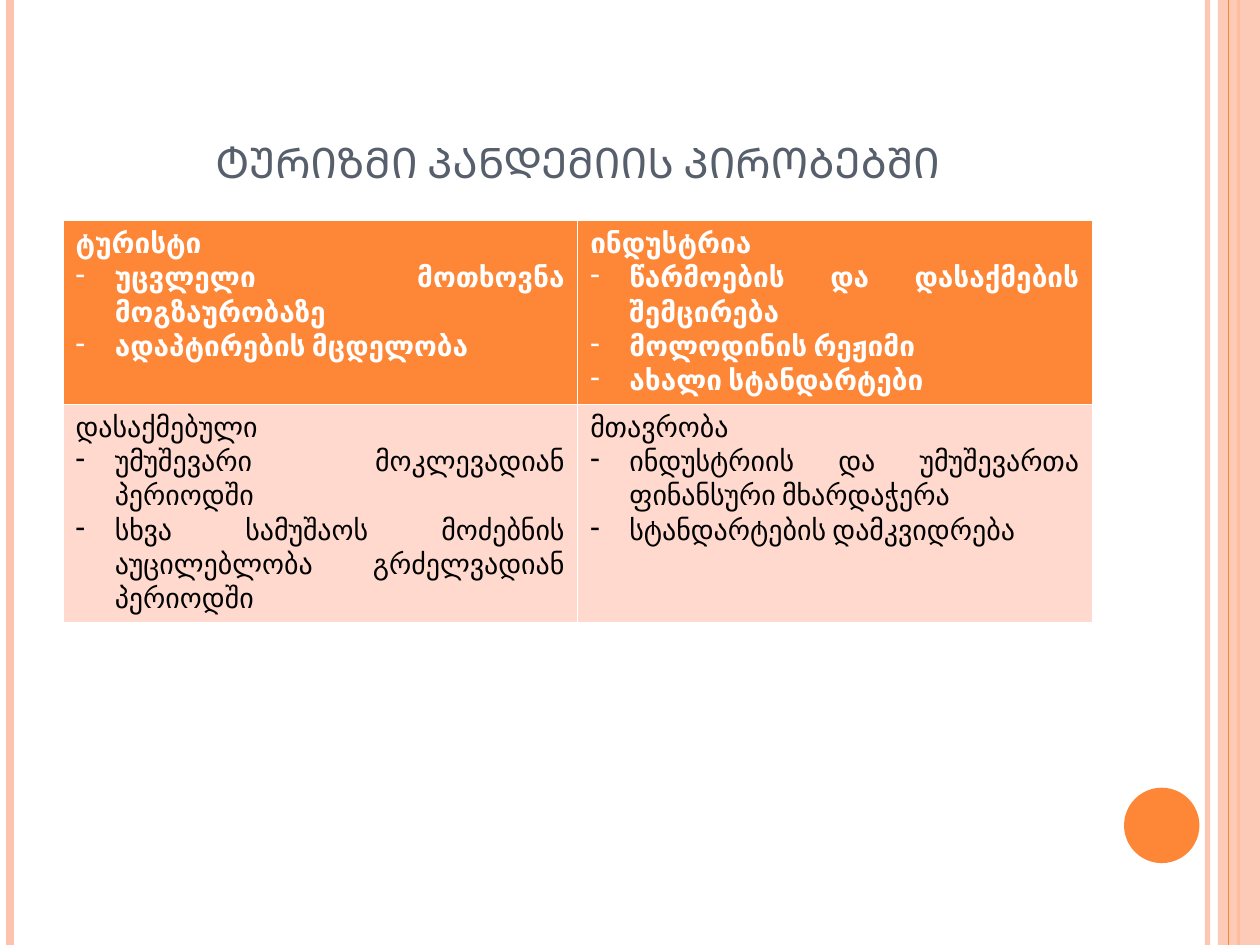
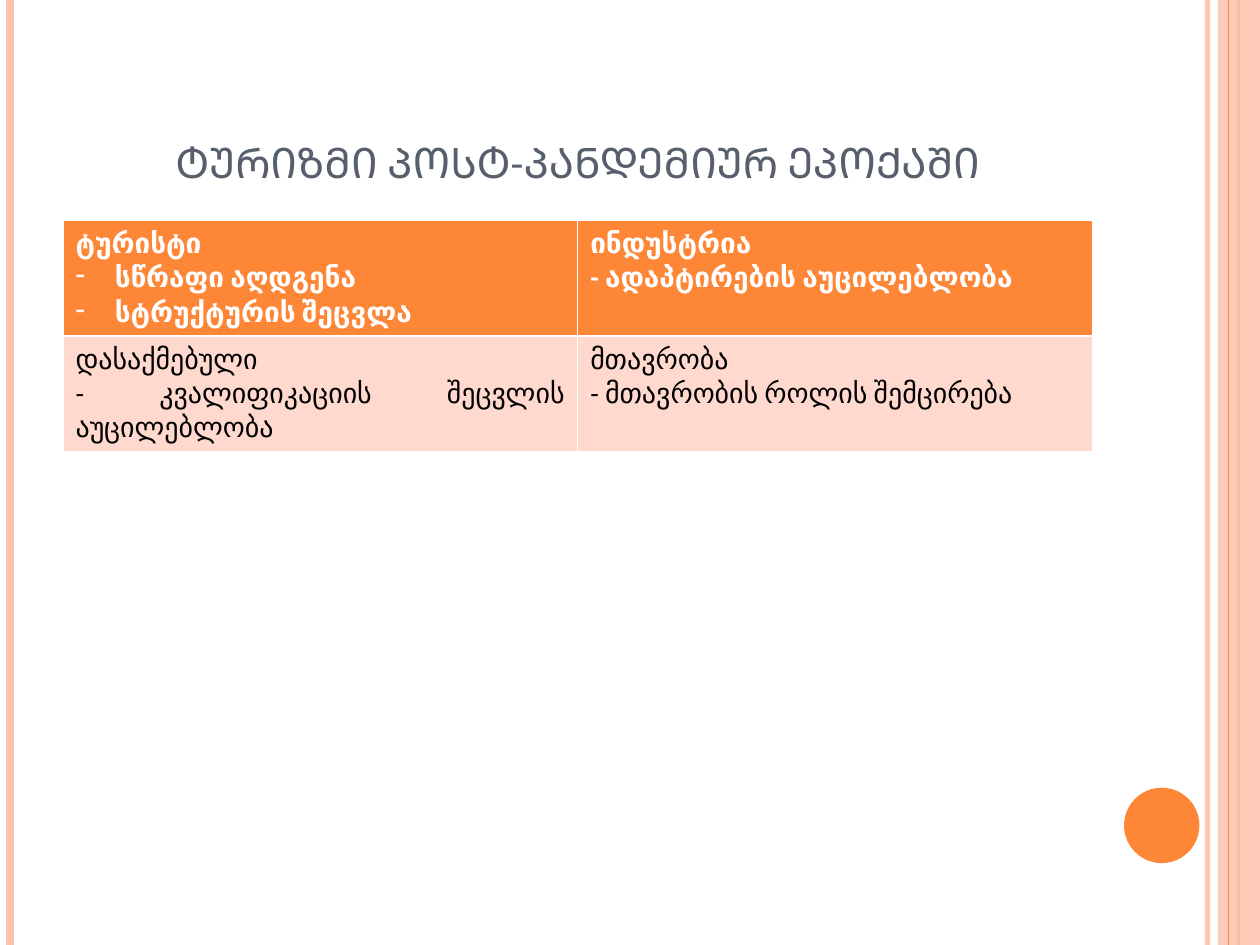
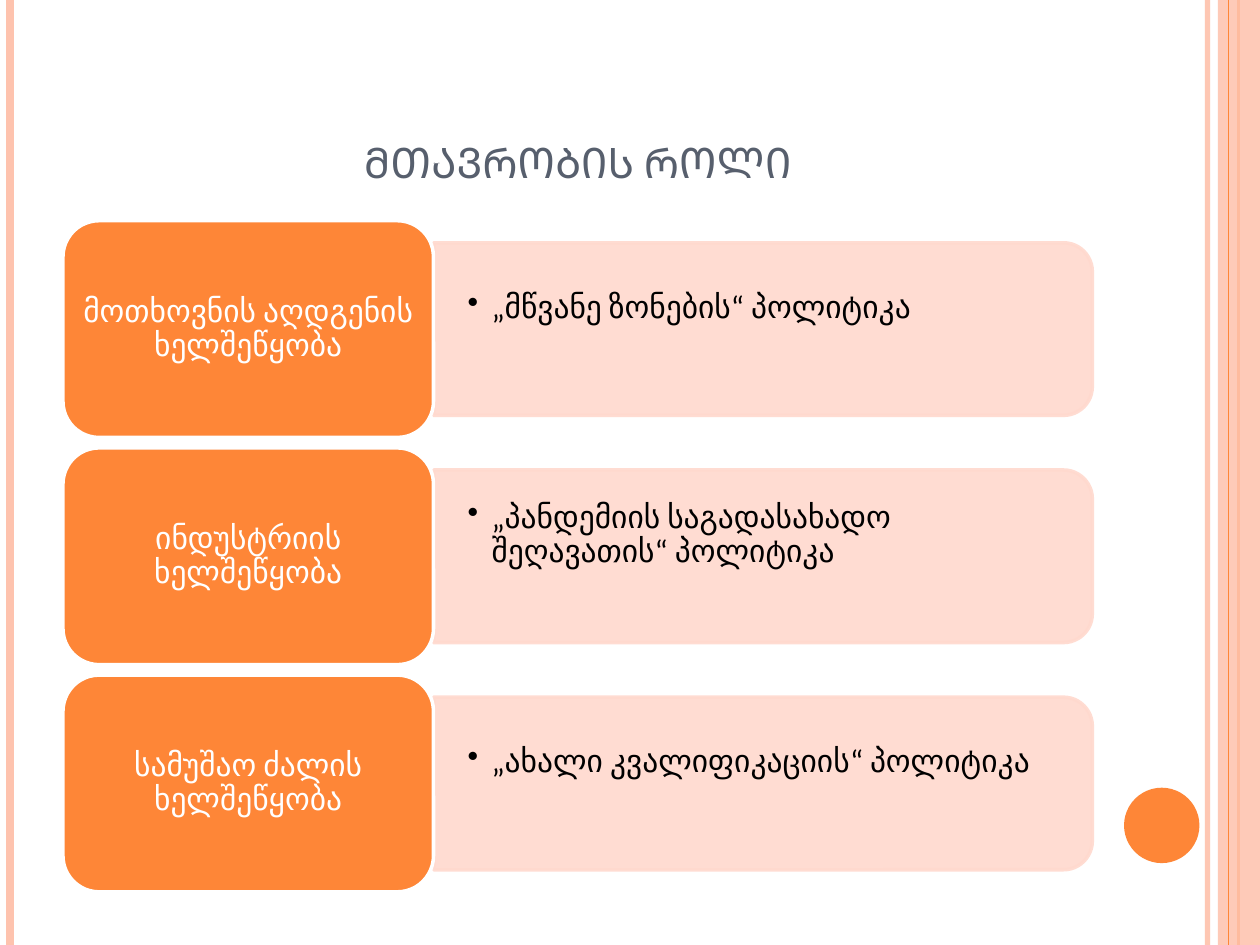
from lxml.etree import SubElement
from pptx import Presentation
from pptx.dml.color import RGBColor
from pptx.enum.shapes import MSO_CONNECTOR, MSO_SHAPE
from pptx.enum.text import MSO_ANCHOR, PP_ALIGN
from pptx.oxml.ns import qn
from pptx.util import Cm, Pt

# Shared look
FONT = "Calibri"
ORANGE, PEACH, PALE = "FE8637", "FEC3AE", "FFD9CE"
SLATE, WHITE, BLACK = "575F6D", "FFFFFF", "000000"
SLIDE_WIDTH, SLIDE_HEIGHT = 25.4, 19.05
LEFT, CONTENT_TOP, CONTENT_WIDTH = 1.27, 4.45, 20.75

# Content: each table cell is a heading and its points
PANDEMIC_TABLE = [
    [("ტურისტი", ["უცვლელი მოთხოვნა მოგზაურობაზე", "ადაპტირების მცდელობა"]),
     ("ინდუსტრია", ["წარმოების და დასაქმების შემცირება", "მოლოდინის რეჟიმი",
                    "ახალი სტანდარტები"])],
    [("დასაქმებული", ["უმუშევარი მოკლევადიან პერიოდში",
                      "სხვა სამუშაოს მოძებნის აუცილებლობა გრძელვადიან პერიოდში"]),
     ("მთავრობა", ["ინდუსტრიის და უმუშევართა ფინანსური მხარდაჭერა",
                   "სტანდარტების დამკვიდრება"])],
]
POST_PANDEMIC_TABLE = [
    [("ტურისტი", ["სწრაფი აღდგენა", "სტრუქტურის შეცვლა"]),
     ("ინდუსტრია", ["- ადაპტირების აუცილებლობა"])],
    [("დასაქმებული", ["- კვალიფიკაციის შეცვლის აუცილებლობა"]),
     ("მთავრობა", ["- მთავრობის როლის შემცირება"])],
]
GOVERNMENT_POLICIES = [
    ("მოთხოვნის აღდგენის ხელშეწყობა", "„მწვანე ზონების“ პოლიტიკა"),
    ("ინდუსტრიის ხელშეწყობა", "„პანდემიის საგადასახადო შეღავათის“ პოლიტიკა"),
    ("სამუშაო ძალის ხელშეწყობა", "„ახალი კვალიფიკაციის“ პოლიტიკა"),
]


def color(value):
    return RGBColor.from_string(value)


def set_opacity(shape, percent):
    for tint in shape.element.iter(qn("a:srgbClr")):
        SubElement(tint, qn("a:alpha")).set("val", str(percent * 1000))


# Text
def add_run(para, text, size, tint, bold=False):
    span = para.add_run()
    span.text = text
    span.font.name = FONT
    span.font.size = Pt(size)
    span.font.bold = bold
    span.font.color.rgb = color(tint)
    return span


def set_bullet(para, mark, indent):
    properties = para._p.get_or_add_pPr()
    properties.set("marL", str(Cm(indent)))
    properties.set("indent", str(-Cm(indent)))
    SubElement(properties, qn("a:buChar")).set("char", mark)


def set_frame(frame, left, top, right, bottom):
    frame.word_wrap = True
    frame.vertical_anchor = MSO_ANCHOR.MIDDLE
    frame.margin_left, frame.margin_top = Cm(left), Cm(top)
    frame.margin_right, frame.margin_bottom = Cm(right), Cm(bottom)


# Shapes
def add_block(page, kind, left, top, width, height, fill, line=None):
    shape = page.shapes.add_shape(kind, Cm(left), Cm(top), Cm(width), Cm(height))
    shape.shadow.inherit = False
    shape.fill.solid()
    shape.fill.fore_color.rgb = color(fill)
    if line:
        shape.line.color.rgb = color(line)
        shape.line.width = Pt(2)
    else:
        shape.line.fill.background()
    return shape


def add_stripe(page, x, tint, width):
    stripe = page.shapes.add_connector(
        MSO_CONNECTOR.STRAIGHT, Cm(x), 0, Cm(x), Cm(SLIDE_HEIGHT))
    stripe.line.color.rgb = color(tint)
    stripe.line.width = Pt(width)
    SubElement(stripe.element.find(qn("p:spPr")), qn("a:effectLst"))
    return stripe


def decorate_layout(page):
    """Draw the side bands and the disc, then move them to the layout."""
    edge = add_stripe(page, 24.34, PEACH, 3)
    set_opacity(edge, 93)
    parts = [edge, add_stripe(page, 0.21, PEACH, 4.5), add_stripe(page, 24.97, ORANGE, 1.5)]
    band = add_block(page, MSO_SHAPE.RECTANGLE, 24.55, 0, 0.85, SLIDE_HEIGHT, PEACH)
    set_opacity(band, 87)
    parts += [band, add_stripe(page, 24.77, ORANGE, 0.75),
              add_block(page, MSO_SHAPE.OVAL, 22.66, 15.88, 1.52, 1.52, ORANGE)]
    for number, part in enumerate(parts, start=101):
        next(part.element.iter(qn("p:cNvPr"))).set("id", str(number))
        page.slide_layout.shapes.element.append(part.element)


# Slide parts
def add_page(deck, title):
    page = deck.slides.add_slide(deck.slide_layouts[5])
    box = page.shapes.title
    box.left, box.top, box.width, box.height = Cm(LEFT), Cm(0.76), Cm(CONTENT_WIDTH), Cm(3.18)
    box.text_frame.vertical_anchor = MSO_ANCHOR.BOTTOM
    para = box.text_frame.paragraphs[0]
    para.alignment = PP_ALIGN.CENTER
    span = add_run(para, title, 30, SLATE)
    span.font._element.set("cap", "small")
    return page


def fill_cell(cell, heading, points, is_header):
    cell.fill.solid()
    cell.fill.fore_color.rgb = color(ORANGE if is_header else PALE)
    tint = WHITE if is_header else BLACK
    frame = cell.text_frame
    add_run(frame.paragraphs[0], heading, 16, tint, is_header)
    for point in points:
        para = frame.add_paragraph()
        para.alignment = PP_ALIGN.JUSTIFY
        if not point.startswith("-"):
            set_bullet(para, "-", 0.79)
        add_run(para, point, 16, tint, is_header)


def add_group_table(page, rows, heights):
    table = page.shapes.add_table(
        len(rows), len(rows[0]), Cm(LEFT), Cm(CONTENT_TOP),
        Cm(CONTENT_WIDTH), Cm(sum(heights))).table
    for row_index, (row, height) in enumerate(zip(rows, heights)):
        table.rows[row_index].height = Cm(height)
        for column_index, (heading, points) in enumerate(row):
            fill_cell(table.cell(row_index, column_index), heading, points, row_index == 0)


def add_policy(page, top, goal, policy):
    card_width, card_height = 7.47, 4.37
    bar_left, bar_width, bar_height = LEFT + card_width, 13.28, 3.48
    middle = top + card_height / 2

    # Pale bar: an upright shape turned so its round end faces right
    bar = add_block(page, MSO_SHAPE.ROUND_2_SAME_RECTANGLE,
                    bar_left + (bar_width - bar_height) / 2, middle - bar_width / 2,
                    bar_height, bar_width, PALE, PALE)
    bar.rotation = 90
    set_opacity(bar, 90)

    # Policy text over the bar
    box = page.shapes.add_textbox(Cm(bar_left), Cm(middle - 1.57), Cm(13.1), Cm(3.15))
    set_frame(box.text_frame, 0.69, 0.36, 0.69, 1.22)
    para = box.text_frame.paragraphs[0]
    para.line_spacing = 0.9
    set_bullet(para, "•", 0.48)
    add_run(para, policy, 18, BLACK)

    # Goal card
    card = add_block(page, MSO_SHAPE.ROUNDED_RECTANGLE, LEFT, top,
                     card_width, card_height, ORANGE, WHITE)
    set_frame(card.text_frame, 0.16, 0.1, 0.16, 0.1)
    para = card.text_frame.paragraphs[0]
    para.alignment = PP_ALIGN.CENTER
    para.line_spacing = 0.9
    add_run(para, goal, 18, WHITE)


def main():
    deck = Presentation()
    deck.slide_width, deck.slide_height = Cm(SLIDE_WIDTH), Cm(SLIDE_HEIGHT)

    page = add_page(deck, "ტურიზმი პანდემიის პირობებში")
    decorate_layout(page)
    add_group_table(page, PANDEMIC_TABLE, [3.66, 4.29])

    page = add_page(deck, "ტურიზმი პოსტ-პანდემიურ ეპოქაში")
    add_group_table(page, POST_PANDEMIC_TABLE, [2.29, 2.29])

    page = add_page(deck, "მთავრობის როლი")
    for index, (goal, policy) in enumerate(GOVERNMENT_POLICIES):
        add_policy(page, CONTENT_TOP + index * 4.58, goal, policy)

    deck.save("out.pptx")


if __name__ == "__main__":
    main()
